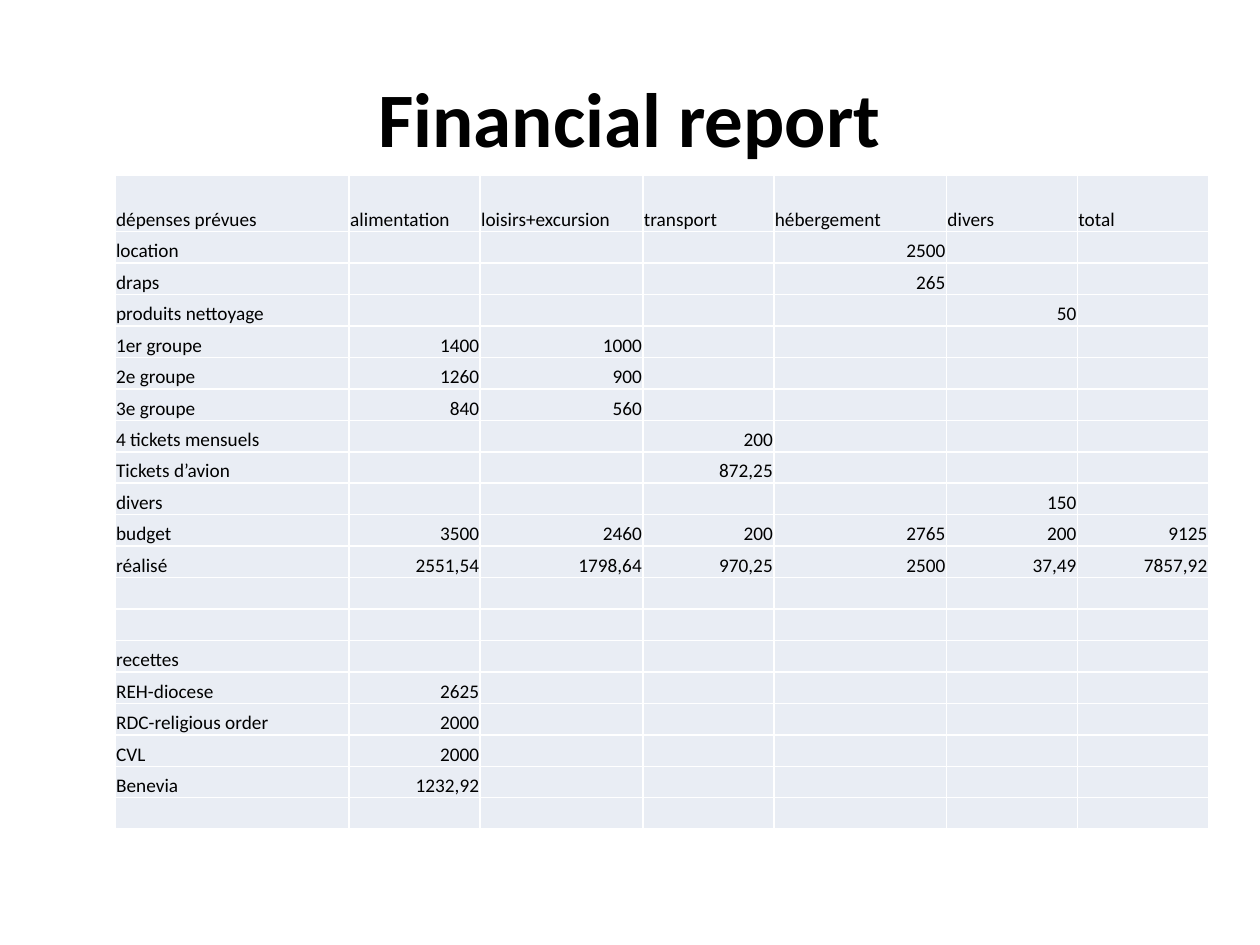
import lxml.etree
import pptx
import pptx.dml.color
import pptx.enum.text
import pptx.oxml.ns
import pptx.util
from pptx.util import Cm

FONT = "Calibri"
HEADINGS = ["dépenses prévues", "alimentation", "loisirs+excursion", "transport",
            "hébergement", "divers", "total"]
ROWS = [
    ["location", "", "", "", "2500"],
    ["draps", "", "", "", "265"],
    ["produits nettoyage", "", "", "", "", "50"],
    ["1er groupe", "1400", "1000"],
    ["2e groupe", "1260", "900"],
    ["3e groupe", "840", "560"],
    ["4 tickets mensuels", "", "", "200"],
    ["Tickets d’avion", "", "", "872,25"],
    ["divers", "", "", "", "", "150"],
    ["budget", "3500", "2460", "200", "2765", "200", "9125"],
    ["réalisé", "2551,54", "1798,64", "970,25", "2500", "37,49", "7857,92"],
    [],
    [],
    ["recettes"],
    ["REH-diocese", "2625"],
    ["RDC-religious order", "2000"],
    ["CVL", "2000"],
    ["Benevia", "1232,92"],
    [],
]
COLUMN_WIDTHS = [4.72, 2.64, 3.28, 2.64, 3.48, 2.64, 2.64]
TABLE_HEIGHT = 13.18
HEADER_HEIGHT = 1.13


def color(hex_string):
    return pptx.dml.color.RGBColor.from_string(hex_string)


def add_borders(cell, hex_string, width):
    properties = cell._tc.get_or_add_tcPr()
    for side in ("a:lnL", "a:lnR", "a:lnT", "a:lnB"):
        line = lxml.etree.SubElement(properties, pptx.oxml.ns.qn(side), w=str(int(width)))
        fill = lxml.etree.SubElement(line, pptx.oxml.ns.qn("a:solidFill"))
        lxml.etree.SubElement(fill, pptx.oxml.ns.qn("a:srgbClr"), val=hex_string)


presentation = pptx.Presentation()
presentation.slide_width = Cm(25.4)
presentation.slide_height = Cm(19.05)
slide = presentation.slides.add_slide(presentation.slide_layouts[5])

title = slide.shapes.title
title.left, title.top, title.width, title.height = Cm(1.27), Cm(0.76), Cm(22.86), Cm(3.18)
title.text_frame.text = "Financial report"
title.text_frame.vertical_anchor = pptx.enum.text.MSO_ANCHOR.MIDDLE
paragraph = title.text_frame.paragraphs[0]
paragraph.alignment = pptx.enum.text.PP_ALIGN.CENTER
font = paragraph.runs[0].font
font.name, font.size, font.bold = FONT, pptx.util.Pt(44), True
font.color.rgb = color("000000")

lines = [HEADINGS] + ROWS
table = slide.shapes.add_table(
    len(lines), len(HEADINGS), Cm(2.32), Cm(3.54),
    Cm(sum(COLUMN_WIDTHS)), Cm(TABLE_HEIGHT)).table
table.first_row = False
table.horz_banding = False
for column, width in zip(table.columns, COLUMN_WIDTHS):
    column.width = Cm(width)

row_height = (TABLE_HEIGHT - HEADER_HEIGHT) / len(ROWS)
for row_index, (row, texts) in enumerate(zip(table.rows, lines)):
    row.height = Cm(row_height if row_index else HEADER_HEIGHT)
    padded_texts = texts + [""] * (len(HEADINGS) - len(texts))
    for column_index, (cell, text) in enumerate(zip(row.cells, padded_texts)):
        add_borders(cell, "FFFFFF", pptx.util.Pt(1))
        cell.fill.solid()
        cell.fill.fore_color.rgb = color("E9EDF4")
        cell.margin_left = cell.margin_right = cell.margin_top = Cm(0.02)
        cell.margin_bottom = 0
        cell.vertical_anchor = pptx.enum.text.MSO_ANCHOR.BOTTOM
        paragraph = cell.text_frame.paragraphs[0]
        if not text:
            # An empty cell needs a small end mark to keep its row low.
            lxml.etree.SubElement(paragraph._p, pptx.oxml.ns.qn("a:endParaRPr"), sz="1100")
            continue
        paragraph.text = text
        if row_index and column_index:
            paragraph.alignment = pptx.enum.text.PP_ALIGN.RIGHT
        font = paragraph.runs[0].font
        font.name, font.size = FONT, pptx.util.Pt(11)
        font.color.rgb = color("000000")

presentation.save("out.pptx")
